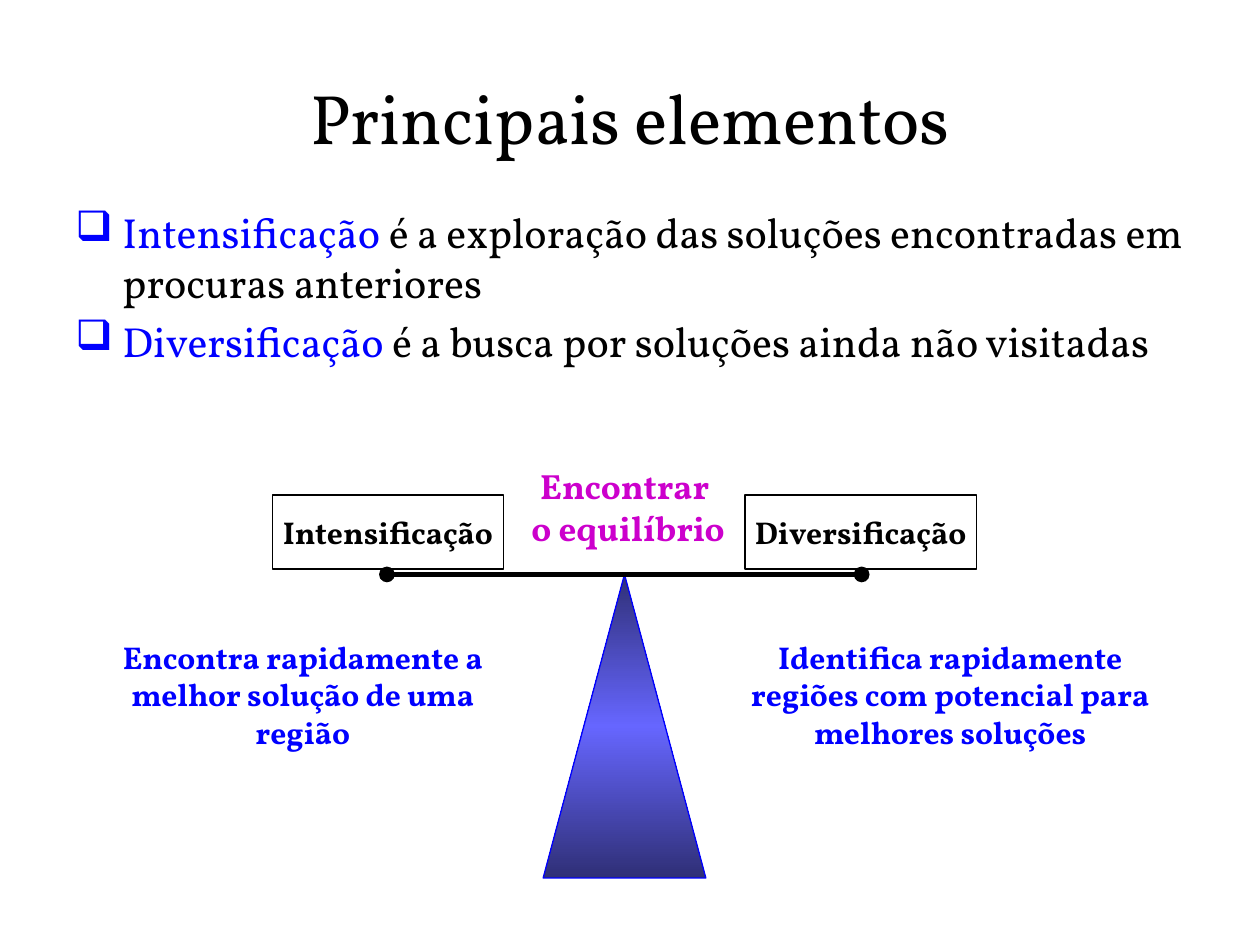
from copy import deepcopy

from lxml.etree import SubElement
from pptx import Presentation
from pptx.dml.color import RGBColor
from pptx.enum.shapes import MSO_CONNECTOR as Connector, MSO_SHAPE as Shape
from pptx.enum.text import MSO_ANCHOR as Anchor, PP_ALIGN as Align
from pptx.oxml.ns import qn
from pptx.util import Cm, Pt

FONT = "Vollkorn"
BLACK, BLUE, MAGENTA = "000000", "0000FF", "CC00CC"
DARK, LIGHT = "2F2F76", "6666FF"


def paint(color_format, value):
    color_format.rgb = RGBColor.from_string(value)


def apply(target, values):
    for name, value in values.items():
        setattr(target, name, value)


def add_span(para, text, size, color, bold=False):
    span = para.add_run()
    span.text = text
    apply(span.font, {"name": FONT, "size": Pt(size), "bold": bold})
    paint(span.font.color, color)


def fill_frame(frame, lines, size, color, bold=False, **frame_values):
    apply(frame, {"word_wrap": True, **frame_values})
    for index, line in enumerate(lines):
        para = frame.add_paragraph() if index else frame.paragraphs[0]
        para.alignment = Align.CENTER
        add_span(para, line, size, color, bold)


def add_text(slide, place, lines, size, color, bold=False, **frame_values):
    box = slide.shapes.add_textbox(*map(Cm, place))
    fill_frame(box.text_frame, lines, size, color, bold, **frame_values)


def add_bullets(slide, place, items):
    frame = slide.shapes.add_textbox(*map(Cm, place)).text_frame
    frame.word_wrap = True
    for index, (term, meaning) in enumerate(items):
        para = frame.add_paragraph() if index else frame.paragraphs[0]
        apply(para, {"alignment": Align.LEFT, "space_after": Pt(4.8)})
        properties = para._p.get_or_add_pPr()
        properties.set("marL", str(Cm(0.95)))
        properties.set("indent", str(Cm(-0.95)))
        SubElement(properties, qn("a:buChar")).set("char", "❑")
        add_span(para, term, 24, BLUE)
        add_span(para, meaning, 24, BLACK)


def add_outlined(slide, kind, place, color):
    shape = slide.shapes.add_shape(kind, *map(Cm, place))
    shape.shadow.inherit = False
    shape.line.width = Pt(0.75)
    paint(shape.line.color, color)
    return shape


def add_weight(slide, place, label):
    weight = add_outlined(slide, Shape.RECTANGLE, place, BLACK)
    weight.fill.background()
    margins = {f"margin_{side}": Cm(0.04) for side in ("left", "right", "top", "bottom")}
    fill_frame(weight.text_frame, [label], 18, BLACK, True,
               vertical_anchor=Anchor.MIDDLE, **margins)


def add_fulcrum(slide, place):
    fulcrum = add_outlined(slide, Shape.ISOSCELES_TRIANGLE, place, BLUE)
    fulcrum.fill.gradient()
    fulcrum.fill.gradient_angle = 270
    stop_list = fulcrum._element.spPr.find(qn("a:gradFill")).find(qn("a:gsLst"))
    stop_list.insert(1, deepcopy(stop_list[0]))
    for stop, position, color in zip(fulcrum.fill.gradient_stops, (0, 0.5, 1), (DARK, LIGHT, DARK)):
        stop.position = position
        paint(stop.color, color)


def add_beam(slide, left, right, height):
    beam = slide.shapes.add_connector(Connector.STRAIGHT, Cm(left), Cm(height), Cm(right), Cm(height))
    beam.line.width = Pt(3)
    paint(beam.line.color, BLACK)
    line = beam.line._get_or_add_ln()
    for end in ("a:headEnd", "a:tailEnd"):
        SubElement(line, qn(end)).set("type", "oval")
    SubElement(beam._element.spPr, qn("a:effectLst"))


def main():
    deck = Presentation()
    apply(deck, {"slide_width": Cm(25.4), "slide_height": Cm(19.05)})
    slide = deck.slides.add_slide(deck.slide_layouts[6])

    add_text(slide, (1.27, 0.76, 22.86, 3.18), ["Principais elementos"], 40, BLACK,
             vertical_anchor=Anchor.MIDDLE)
    add_bullets(slide, (1.27, 4.04, 22.86, 5.28), [
        ("Intensificação", " é a exploração das soluções encontradas em procuras anteriores"),
        ("Diversificação", " é a busca por soluções ainda não visitadas"),
    ])
    add_text(slide, (10.44, 9.02, 4.45, 2.39), ["Encontrar ", "o equilíbrio"], 20, MAGENTA, True,
             vertical_anchor=Anchor.MIDDLE, word_wrap=False)

    for left, label in ((5.49, "Intensificação"), (15.02, "Diversificação")):
        add_weight(slide, (left, 9.98, 4.66, 1.49), label)
    for left, width, text in (
        (14.81, 8.69, "Identifica rapidamente regiões com potencial para melhores soluções"),
        (1.9, 8.41, "Encontra rapidamente a melhor solução de uma região"),
    ):
        add_text(slide, (left, 12.73, width, 2.54), [text], 18, BLUE, True)

    add_fulcrum(slide, (10.95, 11.58, 3.28, 6.12))
    add_beam(slide, 7.8, 17.37, 11.58)
    deck.save("out.pptx")


if __name__ == "__main__":
    main()
